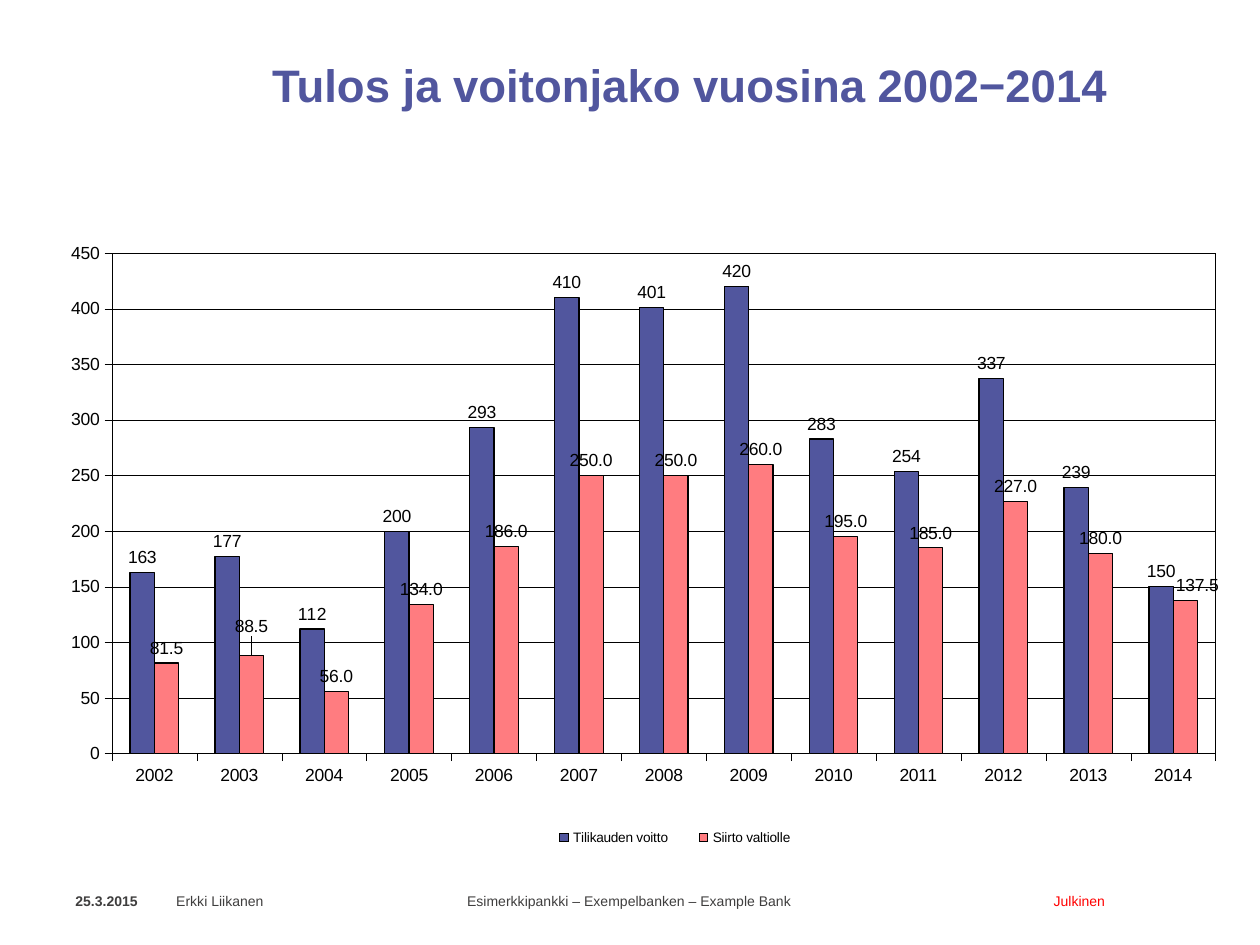
from lxml import etree
from pptx import Presentation
from pptx.chart.data import CategoryChartData
from pptx.dml.color import RGBColor
from pptx.enum.chart import XL_CHART_TYPE as ChartType
from pptx.enum.chart import XL_LABEL_POSITION as LabelPosition
from pptx.enum.chart import XL_LEGEND_POSITION as LegendPosition
from pptx.enum.chart import XL_TICK_MARK as TickMark
from pptx.enum.text import MSO_ANCHOR as Anchor
from pptx.enum.text import PP_ALIGN as Align
from pptx.oxml import parse_xml
from pptx.oxml.ns import nsdecls, qn
from pptx.util import Inches, Pt

INDIGO = RGBColor(0x51, 0x56, 0x9E)
CORAL = RGBColor(0xFF, 0x7C, 0x80)
GREY = RGBColor(0x3F, 0x3E, 0x3E)
RED = RGBColor(0xFF, 0x00, 0x00)
BLACK = RGBColor(0x00, 0x00, 0x00)
FONT = "Arial"

PROFIT = [163, 177, 112, 200, 293, 410, 401, 420, 283, 254, 337, 239, 150]
TRANSFER = [81.5, 88.5, 56, 134, 186, 250, 250, 260, 195, 185, 227, 180, 137.5]


def style_font(font, size, color=BLACK, bold=False):
    """Apply the slide's typeface with a size, colour and weight."""
    font.name = FONT
    font.size = Pt(size)
    font.bold = bold
    font.color.rgb = color


def style_line(line, width):
    """Make a line solid black."""
    line.color.rgb = BLACK
    line.width = Pt(width)


def write_text(shape, text, size=8, color=GREY, bold=False, align=Align.LEFT,
               anchor=Anchor.MIDDLE, wrap=True):
    """Fill a shape with one formatted paragraph."""
    frame = shape.text_frame
    frame.word_wrap = wrap
    frame.vertical_anchor = anchor
    paragraph = frame.paragraphs[0]
    paragraph.alignment = align
    run = paragraph.add_run()
    run.text = text
    style_font(run.font, size, color, bold)


def add_title(slide, text):
    """Place the title in its placeholder."""
    title = slide.shapes.title
    title.left, title.top = Inches(2.06), Inches(0.4)
    title.width, title.height = Inches(7.16), Inches(1.25)
    write_text(title, text, size=26, color=INDIGO, bold=True, anchor=Anchor.TOP)


def add_footer(slide, text, left, width, **text_format):
    """Add one text of the footer row."""
    box = slide.shapes.add_textbox(Inches(left), Inches(6.95), Inches(width), Inches(0.4))
    write_text(box, text, **text_format)


def set_layout(parent, index, **settings):
    """Give a chart part a manual layout at a child index."""
    for layout in parent.findall(qn("c:layout")):
        parent.remove(layout)
    layout = etree.Element(qn("c:layout"))
    manual = etree.SubElement(layout, qn("c:manualLayout"))
    for name, value in settings.items():
        etree.SubElement(manual, qn(f"c:{name}")).set("val", str(value))
    parent.insert(index, layout)


def style_axis(axis):
    """Format an axis with thin lines and outside ticks."""
    axis.major_tick_mark = TickMark.OUTSIDE
    axis.minor_tick_mark = TickMark.NONE
    style_font(axis.tick_labels.font, 10)
    style_line(axis.format.line, 0.25)


def style_series(series, color, number_format):
    """Colour a series and label its values."""
    series.format.fill.solid()
    series.format.fill.fore_color.rgb = color
    style_line(series.format.line, 0.75)
    labels = series.data_labels
    labels.show_value = True
    labels.number_format = number_format
    labels.number_format_is_linked = False
    labels.position = LabelPosition.OUTSIDE_END
    style_font(labels.font, 10)


def shift_label(series, index, x, y):
    """Move one data label by a fraction of the chart."""
    label = series.points[index].data_label
    style_font(label.font, 10)
    label.position = LabelPosition.OUTSIDE_END
    element = series.data_labels._element
    for item in element.findall(qn("c:dLbl")):
        if item.find(qn("c:idx")).get("val") == str(index):
            set_layout(item, 1, x=x, y=y)


def style_legend(chart):
    """Place the legend below the columns."""
    chart.has_legend = True
    legend = chart.legend
    legend.position = LegendPosition.BOTTOM
    legend.include_in_layout = False
    style_font(legend.font, 7.8)
    set_layout(legend._element, 1, xMode="edge", yMode="edge", x=0.41, y=0.95, w=0.24, h=0.04)


def frame_plot(chart):
    """Fix the plot area and draw its border."""
    plot_area = chart._chartSpace.chart.plotArea
    set_layout(plot_area, 0, layoutTarget="inner", xMode="edge", yMode="edge",
               x=0.057, y=0.101, w=0.927, h=0.744)
    plot_area.append(parse_xml(
        f'<c:spPr {nsdecls("c", "a")}><a:noFill/><a:ln w="3175"><a:solidFill>'
        f'<a:srgbClr val="{BLACK}"/></a:solidFill></a:ln></c:spPr>'))


def add_profit_chart(slide):
    """Add the clustered columns of profit and transfer by year."""
    data = CategoryChartData()
    data.categories = [str(year) for year in range(2002, 2015)]
    data.add_series("Tilikauden voitto", PROFIT, number_format="0")
    data.add_series("Siirto valtiolle", TRANSFER, number_format="0.0")
    chart = slide.shapes.add_chart(ChartType.COLUMN_CLUSTERED, Inches(0.35), Inches(1.47),
                                   Inches(9.45), Inches(5.34), data).chart
    chart.has_title = False
    style_font(chart.font, 10)
    plot = chart.plots[0]
    plot.gap_width = 150
    plot.overlap = 0
    plot.vary_by_categories = False
    profit, transfer = plot.series
    style_series(profit, INDIGO, "0")
    style_series(transfer, CORAL, "0.0")
    shift_label(transfer, 1, 0, -0.02)
    shift_label(transfer, 12, 0.01, 0)

    style_axis(chart.category_axis)
    value_axis = chart.value_axis
    style_axis(value_axis)
    value_axis.minimum_scale, value_axis.maximum_scale = 0, 450
    value_axis.major_unit = 50
    value_axis.tick_labels.number_format = "0"
    value_axis.tick_labels.number_format_is_linked = False
    style_line(value_axis.major_gridlines.format.line, 0.25)
    style_legend(chart)
    frame_plot(chart)


def main():
    """Build the slide and save it."""
    presentation = Presentation()
    presentation.slide_width, presentation.slide_height = Inches(10), Inches(7.5)
    slide = presentation.slides.add_slide(presentation.slide_layouts[5])
    add_title(slide, "Tulos ja voitonjako vuosina 2002−2014")
    add_profit_chart(slide)
    add_footer(slide, "25.3.2015", 0.5, 0.8, bold=True)
    add_footer(slide, "Erkki Liikanen", 1.3, 2.11)
    add_footer(slide, "Esimerkkipankki – Exempelbanken – Example Bank", 3.53, 2.93,
               align=Align.CENTER)
    add_footer(slide, "Julkinen", 7.38, 1.49, color=RED, align=Align.RIGHT, wrap=False)
    presentation.save("out.pptx")


if __name__ == "__main__":
    main()
